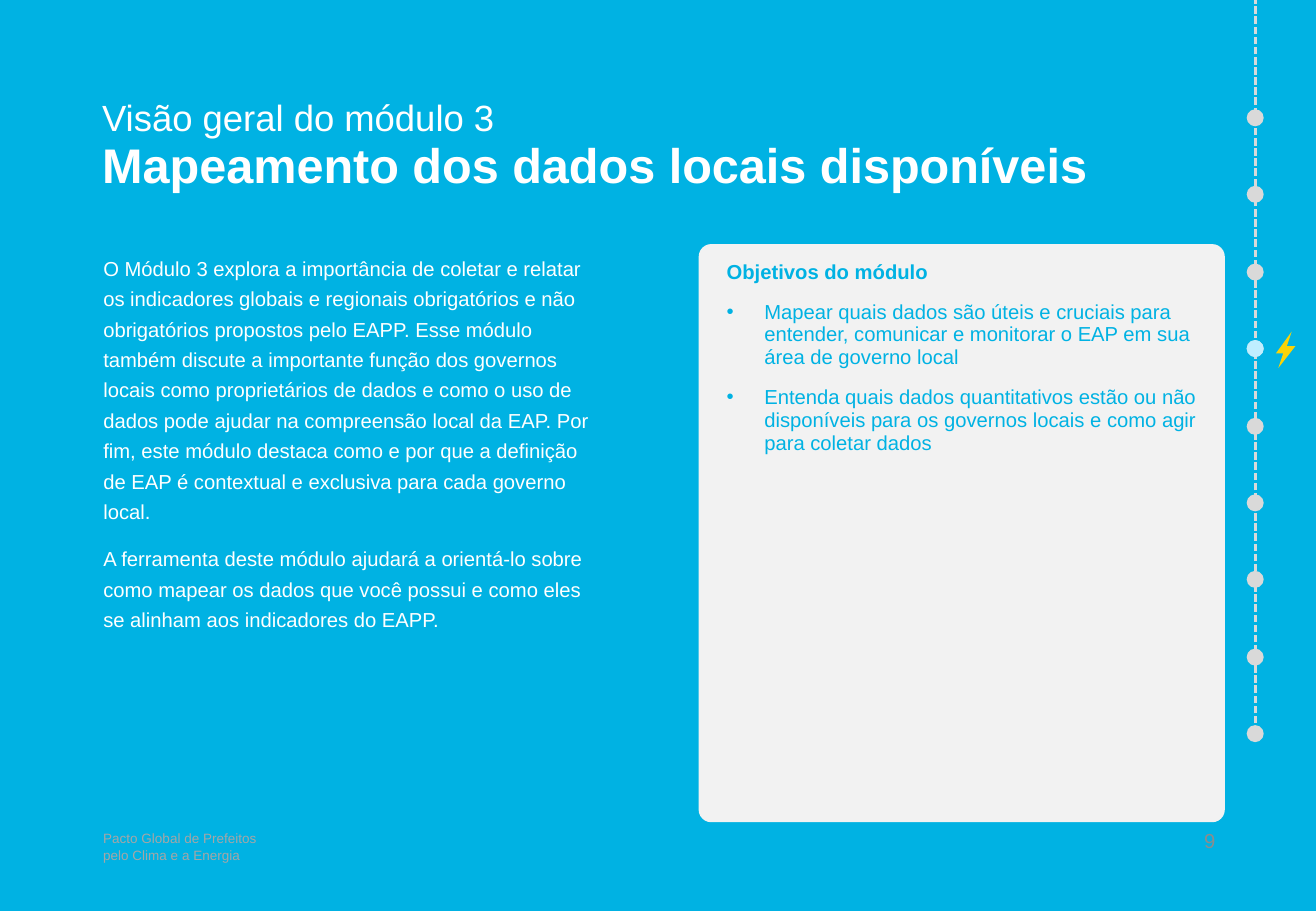
import lxml.etree
import pptx
import pptx.dml.color
import pptx.enum.dml
import pptx.enum.shapes
import pptx.enum.text
import pptx.oxml.ns
import pptx.util

EMU_PER_PX = 9144  # 100 px to the inch
COLORS = {
    "blue": "00B2E3",
    "white": "FFFFFF",
    "panel": "F2F2F2",
    "track": "D9D9D9",
    "current": "BFEEFF",
    "bolt": "FAD307",
    "footer": "A6A6A6",
    "number": "8C8C8C",
}
FONT = "Arial"
BULLET_INDENT = 31
DOT_SIZE, DOT_LEFT, DOT_TOP, DOT_STEP, DOT_COUNT = 14, 1026, 90, 63.4, 9
CURRENT_DOT = 3

INTRODUCTION = [
    "O Módulo 3 explora a importância de coletar e relatar os indicadores globais e "
    "regionais obrigatórios e não obrigatórios propostos pelo EAPP. Esse módulo também "
    "discute a importante função dos governos locais como proprietários de dados e como "
    "o uso de dados pode ajudar na compreensão local da EAP. Por fim, este módulo destaca "
    "como e por que a definição de EAP é contextual e exclusiva para cada governo local.",
    "A ferramenta deste módulo ajudará a orientá-lo sobre como mapear os dados que você "
    "possui e como eles se alinham aos indicadores do EAPP.",
]
OBJECTIVES = [
    "Mapear quais dados são úteis e cruciais para entender, comunicar e monitorar o EAP "
    "em sua área de governo local",
    "Entenda quais dados quantitativos estão ou não disponíveis para os governos locais "
    "e como agir para coletar dados",
]


def px(value):
    return pptx.util.Emu(round(value * EMU_PER_PX))


def rgb(name):
    return pptx.dml.color.RGBColor.from_string(COLORS[name])


def add_element(parent, tag, **attributes):
    element = lxml.etree.SubElement(parent, pptx.oxml.ns.qn(tag))
    for key, value in attributes.items():
        element.set(key, str(value))
    return element


def place(shape, left, top, width, height):
    shape.left, shape.top = px(left), px(top)
    shape.width, shape.height = px(width), px(height)


def set_frame(shape, insets, anchor="TOP"):
    frame = shape.text_frame
    frame.word_wrap = True
    frame.auto_size = pptx.enum.text.MSO_AUTO_SIZE.NONE
    frame.vertical_anchor = getattr(pptx.enum.text.MSO_ANCHOR, anchor)
    frame.margin_left, frame.margin_top, frame.margin_right, frame.margin_bottom = map(px, insets)
    return frame


def add_run(paragraph, text, size, color, bold=False):
    run = paragraph.add_run()
    run.text = text
    run.font.name = FONT
    run.font.size = pptx.util.Pt(size)
    run.font.bold = bold
    run.font.color.rgb = rgb(color)


def add_body_paragraph(frame, text, color, line_spacing, bold=False, bullet=False):
    is_first = not frame.text
    paragraph = frame.paragraphs[0] if is_first else frame.add_paragraph()
    paragraph.line_spacing = line_spacing
    paragraph.space_before = pptx.util.Pt(0 if is_first else 10)
    properties = paragraph._p.get_or_add_pPr()
    indent = px(BULLET_INDENT) if bullet else 0
    properties.set("marL", str(indent))
    properties.set("indent", str(-indent))
    if bullet:
        add_element(properties, "a:buFont", typeface=FONT)
        add_element(properties, "a:buChar", char="•")
    else:
        add_element(properties, "a:buNone")
    add_run(paragraph, text, 12, color, bold)


def paint(shape, color):
    shape.shadow.inherit = False
    shape.fill.solid()
    shape.fill.fore_color.rgb = rgb(color)
    shape.line.fill.background()


def add_dot(slide, index, color):
    dot = slide.shapes.add_shape(
        pptx.enum.shapes.MSO_SHAPE.OVAL,
        px(DOT_LEFT), px(round(DOT_TOP + index * DOT_STEP)), px(DOT_SIZE), px(DOT_SIZE))
    paint(dot, color)


def add_track(slide):
    track = slide.shapes.add_connector(
        pptx.enum.shapes.MSO_CONNECTOR.STRAIGHT, px(1033), px(604), px(1033), px(0))
    track.line.color.rgb = rgb("track")
    track.line.width = pptx.util.Pt(1.5)
    track.line.dash_style = pptx.enum.dml.MSO_LINE.SQUARE_DOT
    add_element(track._element.spPr, "a:effectLst")
    for index in range(DOT_COUNT):
        add_dot(slide, index, "track")
    add_dot(slide, CURRENT_DOT, "current")


def add_bolt_half(slide, points):
    builder = slide.shapes.build_freeform(*points[0], scale=EMU_PER_PX)
    builder.add_line_segments(points[1:], close=True)
    paint(builder.convert_to_shape(), "bolt")


def add_label(slide, box, insets, lines, size, color, anchor="TOP", align="LEFT"):
    label = slide.shapes.add_textbox(*map(px, box))
    paragraph = set_frame(label, insets, anchor).paragraphs[0]
    paragraph.alignment = getattr(pptx.enum.text.PP_ALIGN, align)
    for index, line in enumerate(lines):
        if index:
            paragraph.add_line_break()
        add_run(paragraph, line, size, color)


def fill_title(title):
    place(title, 74, 75, 906, 108)
    paragraph = set_frame(title, (10, 6, 10, 5)).paragraphs[0]
    paragraph.alignment = pptx.enum.text.PP_ALIGN.LEFT
    paragraph.line_spacing = 0.94
    add_run(paragraph, "Visão geral do módulo 3", 21.6, "white")
    paragraph.add_line_break()
    add_run(paragraph, "Mapeamento dos dados locais disponíveis", 28.8, "white", bold=True)


def fill_introduction(body):
    place(body, 75, 201, 433, 476)
    frame = set_frame(body, (10, 5, 12, 5))
    for text in INTRODUCTION:
        add_body_paragraph(frame, text, "white", 1.25)


def fill_objectives(body):
    place(body, 575, 201, 433, 476)
    geometry = add_element(body._element.spPr, "a:prstGeom", prst="roundRect")
    adjustments = add_element(geometry, "a:avLst")
    add_element(adjustments, "a:gd", name="adj", fmla="val 2400")
    body.fill.solid()
    body.fill.fore_color.rgb = rgb("panel")
    frame = set_frame(body, (20, 11, 10, 5))
    add_body_paragraph(frame, "Objetivos do módulo", "blue", 0.94, bold=True)
    for text in OBJECTIVES:
        add_body_paragraph(frame, text, "blue", 0.94, bullet=True)


def main():
    presentation = pptx.Presentation()
    presentation.slide_width, presentation.slide_height = px(1083), px(750)
    slide = presentation.slides.add_slide(presentation.slide_layouts[3])
    slide.background.fill.solid()
    slide.background.fill.fore_color.rgb = rgb("blue")

    # Title and the two text columns
    fill_title(slide.shapes.title)
    fill_introduction(slide.placeholders[1])
    fill_objectives(slide.placeholders[2])

    # Module track with its current position
    add_track(slide)
    add_bolt_half(slide, [(1057, 291), (1050, 291), (1063, 273), (1058, 288)])
    add_bolt_half(slide, [(1058, 285), (1066, 285), (1052, 303), (1057, 288)])

    # Footer and page number
    add_label(slide, (75, 677, 183, 40), (10, 5, 10, 5),
              ["Pacto Global de Prefeitos", "pelo Clima e a Energia"], 8, "footer", anchor="MIDDLE")
    add_label(slide, (958, 677, 52, 40), (10, 5, 10, 5), ["9"], 12, "number", align="RIGHT")
    presentation.save("out.pptx")


if __name__ == "__main__":
    main()
